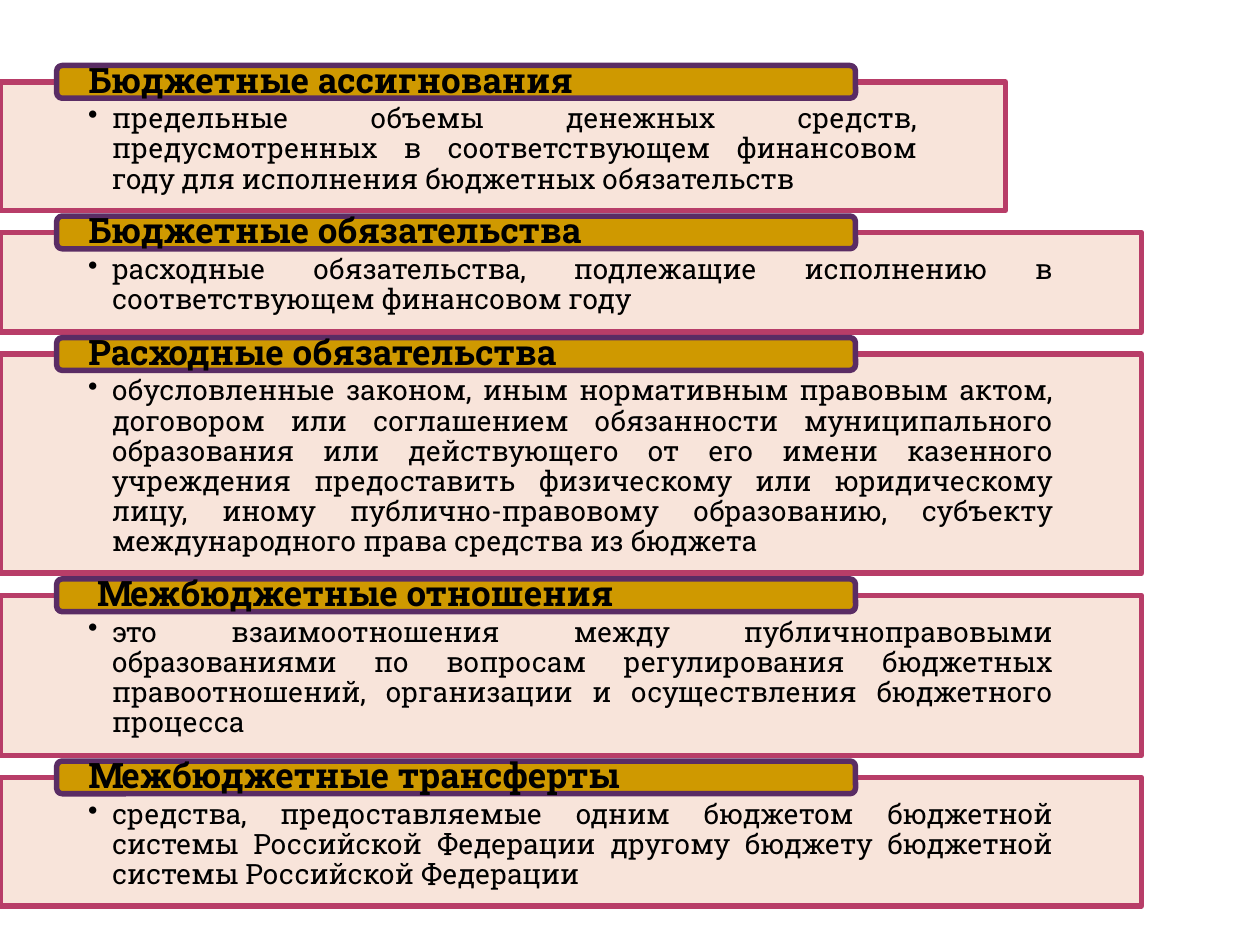
from lxml.etree import SubElement
from pptx import Presentation
from pptx.dml.color import RGBColor
from pptx.enum.shapes import MSO_SHAPE as Shape
from pptx.enum.text import MSO_ANCHOR as Anchor, PP_ALIGN as Align
from pptx.oxml.ns import qn
from pptx.util import Inches, Pt

COLORS = {
    "panel": "F8E2D7",
    "panel_edge": "B83D68",
    "bar": "CF9900",
    "bar_edge": "5A2C64",
    "text": "000000",
}
FONT = "Roboto Slab"
TOP, GAP, BAR_RISE = 0.65, 0.175, 0.13

TERMS = [
    ("Бюджетные ассигнования",
     "предельные объемы денежных средств, предусмотренных в соответствующем "
     "финансовом году для исполнения бюджетных обязательств", 7.98, 1.02),
    ("Бюджетные обязательства",
     "расходные обязательства, подлежащие исполнению в соответствующем "
     "финансовом году", 9.06, 0.79),
    ("Расходные обязательства",
     "обусловленные законом, иным нормативным правовым актом, договором или "
     "соглашением обязанности муниципального образования или действующего от "
     "его имени казенного учреждения предоставить физическому или юридическому "
     "лицу, иному публично-правовому образованию, субъекту международного "
     "права средства из бюджета", 9.06, 1.74),
    (" Межбюджетные отношения",
     "это взаимоотношения между публичноправовыми образованиями по вопросам "
     "регулирования бюджетных правоотношений, организации и осуществления "
     "бюджетного процесса", 9.06, 1.27),
    ("Межбюджетные трансферты",
     "средства, предоставляемые одним бюджетом бюджетной системы Российской "
     "Федерации другому бюджету бюджетной системы Российской Федерации",
     9.06, 1.02),
]


def write(frame, text, size, bold=False, align=Align.LEFT, anchor=Anchor.TOP,
          insets=(0, 0, 0, 0), hanging=0):
    """Fill a text frame with one formatted paragraph, bulleted if hanging."""
    frame.word_wrap = True
    frame.vertical_anchor = anchor
    (frame.margin_left, frame.margin_top,
     frame.margin_right, frame.margin_bottom) = map(Inches, insets)
    paragraph = frame.paragraphs[0]
    if hanging:
        properties = paragraph._p.get_or_add_pPr()
        properties.set("marL", str(Inches(hanging)))
        properties.set("indent", str(-Inches(hanging)))
        SubElement(properties, qn("a:buChar"), char="•")
    paragraph.alignment = align
    paragraph.line_spacing = 0.9
    run = paragraph.add_run()
    run.text = text
    run.font.name = FONT
    run.font.size = Pt(size)
    run.font.bold = bold
    run.font.color.rgb = RGBColor.from_string(COLORS["text"])


class GlossarySlide:
    """Holds the slide and draws its panels and heading bars."""

    def __init__(self, slide):
        """Keep the slide to draw on."""
        self.slide = slide

    def box(self, kind, name, left, top, width, height):
        """Add an outlined shape in the named colours."""
        box = self.slide.shapes.add_shape(
            kind, Inches(left), Inches(top), Inches(width), Inches(height))
        box.shadow.inherit = False
        box.fill.solid()
        box.fill.fore_color.rgb = RGBColor.from_string(COLORS[name])
        box.line.color.rgb = RGBColor.from_string(COLORS[name + "_edge"])
        box.line.width = Pt(3.15)
        return box

    def panel(self, definition, top, width, height):
        """Add a translucent panel with a bulleted definition."""
        panel = self.box(Shape.RECTANGLE, "panel", 0, top, width, height)
        color = panel.fill._xPr.find(qn("a:solidFill"))[0]
        SubElement(color, qn("a:alpha"), val="90000")
        write(panel.text_frame, definition, 16, align=Align.JUSTIFY,
              insets=(0.7, 0.18, 0.7, 0.12), hanging=0.19)

    def bar(self, term, top):
        """Add a rounded bar with a bold term."""
        bar = self.box(Shape.ROUNDED_RECTANGLE, "bar", 0.45, top, 6.34, 0.26)
        write(bar.text_frame, term, 20, bold=True, anchor=Anchor.MIDDLE,
              insets=(0.24, 0, 0.24, 0))


def main():
    """Build the glossary slide and save it."""
    deck = Presentation()
    deck.slide_width, deck.slide_height = Inches(10), Inches(7.5)
    glossary = GlossarySlide(deck.slides.add_slide(deck.slide_layouts[6]))
    top = TOP
    for term, definition, width, height in TERMS:
        glossary.panel(definition, top, width, height)
        glossary.bar(term, top - BAR_RISE)
        top += height + GAP
    deck.save("out.pptx")


if __name__ == "__main__":
    main()
